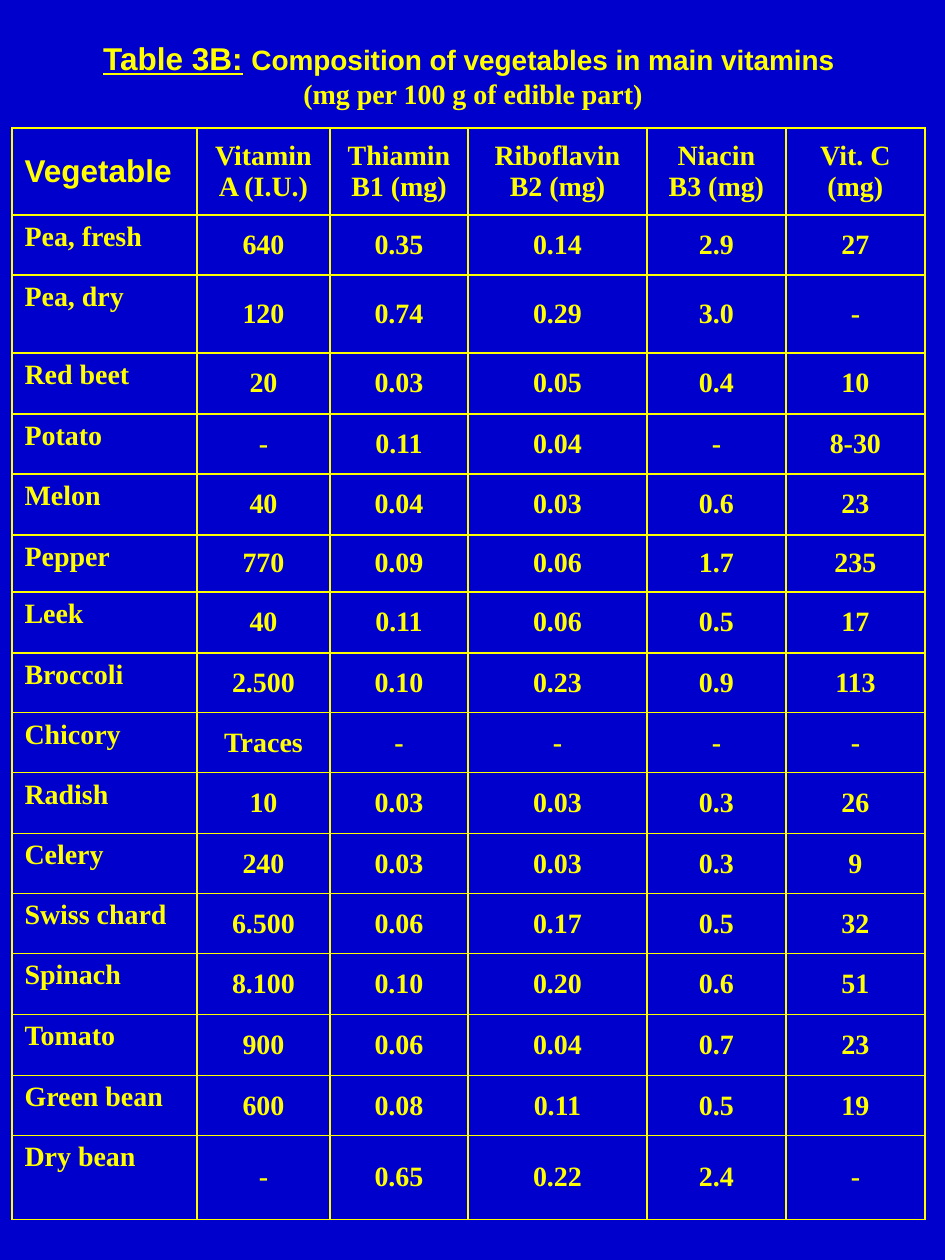
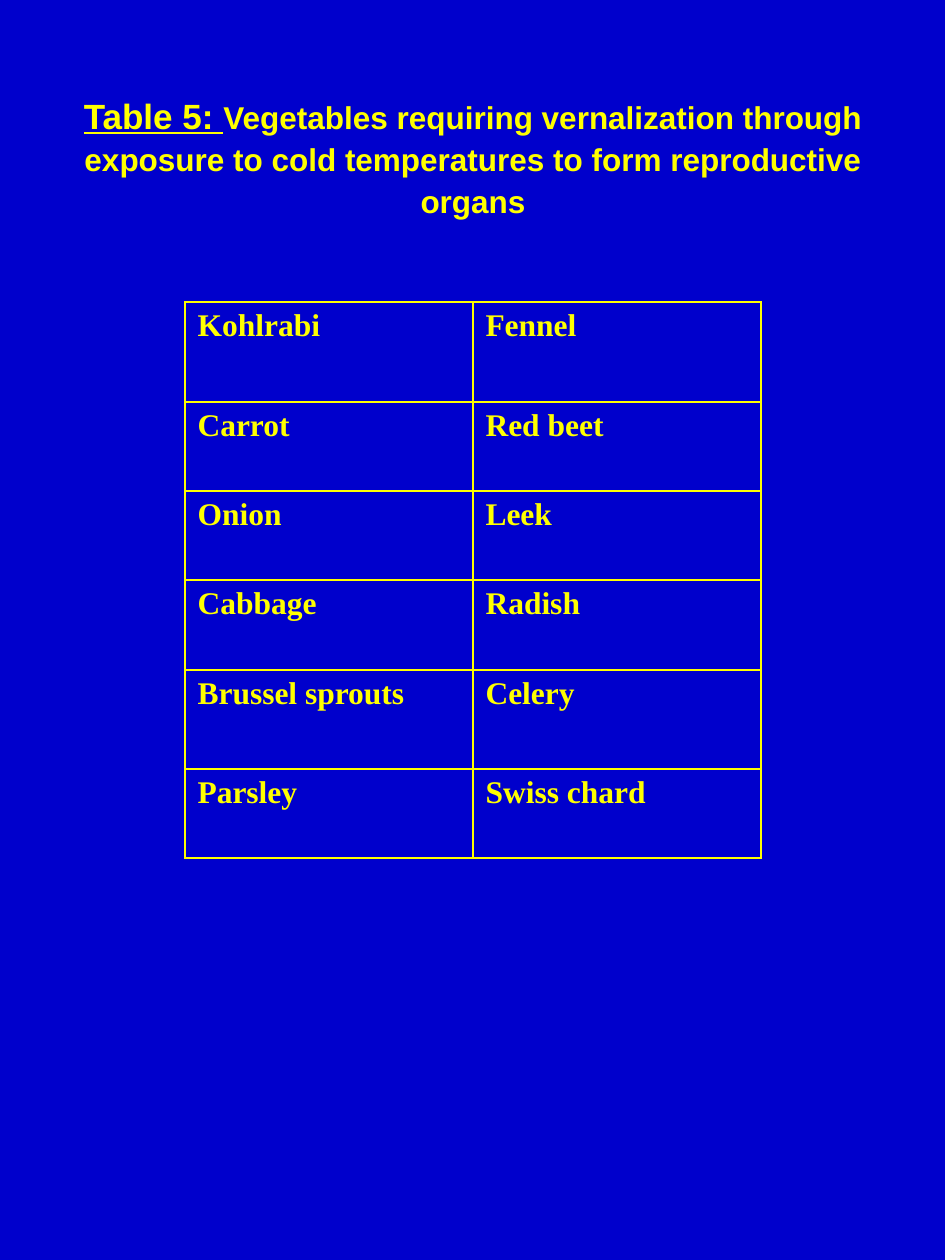
"""Build two slides of vegetable tables: vitamin composition and vernalization."""
from lxml import etree
from pptx import Presentation
from pptx.dml.color import RGBColor
from pptx.enum.text import MSO_ANCHOR, PP_ALIGN
from pptx.oxml.ns import qn
from pptx.util import Pt

PX = 914400 // 126
COLORS = {"background": "0000CC", "ink": "FFFF00"}
SANS, SERIF = "Arial", "Times New Roman"

VITAMIN_TITLE = [
    ("Table 3B:", {"size": Pt(18), "name": SANS, "underline": True}),
    (" ", {"size": Pt(18), "name": SANS}),
    ("Composition of vegetables in main vitamins \v", {"size": Pt(16), "name": SANS}),
    ("(mg per 100 g of edible part)", {"size": Pt(16), "name": SERIF}),
]
VITAMIN_HEADER = ("Vegetable", "Vitamin Α (I.U.)", "Thiamin\nB1 (mg)",
                  "Riboflavin\nB2 (mg)", "Niacin B3 (mg)", "Vit. C\n(mg)")
VITAMINS = [
    ("Pea, fresh", "640", "0.35", "0.14", "2.9", "27"),
    ("Pea, dry", "120", "0.74", "0.29", "3.0", "-"),
    ("Red beet", "20", "0.03", "0.05", "0.4", "10"),
    ("Potato", "-", "0.11", "0.04", "-", "8-30"),
    ("Melon", "40", "0.04", "0.03", "0.6", "23"),
    ("Pepper", "770", "0.09", "0.06", "1.7", "235"),
    ("Leek", "40", "0.11", "0.06", "0.5", "17"),
    ("Broccoli", "2.500", "0.10", "0.23", "0.9", "113"),
    ("Chicory", "Traces", "-", "-", "-", "-"),
    ("Radish", "10", "0.03", "0.03", "0.3", "26"),
    ("Celery", "240", "0.03", "0.03", "0.3", "9"),
    ("Swiss chard", "6.500", "0.06", "0.17", "0.5", "32"),
    ("Spinach", "8.100", "0.10", "0.20", "0.6", "51"),
    ("Tomato", "900", "0.06", "0.04", "0.7", "23"),
    ("Green bean", "600", "0.08", "0.11", "0.5", "19"),
    ("Dry bean", "-", "0.65", "0.22", "2.4", "-"),
]
VERNALIZATION_TITLE = [
    ("Table 5: ", {"size": Pt(20), "name": SANS, "underline": True}),
    ("Vegetables requiring vernalization through exposure to cold temperatures "
     "to form reproductive organs", {"size": Pt(18), "name": SANS}),
]
VERNALIZED = [
    ("Kohlrabi", "Fennel"),
    ("Carrot", "Red beet"),
    ("Onion", "Leek"),
    ("Cabbage", "Radish"),
    ("Brussel sprouts", "Celery"),
    ("Parsley", "Swiss chard"),
]


def vitamin_format(row, column):
    """Return the font, anchor and alignment of a cell in the vitamin table."""
    corner = row == column == 0
    font = {"size": Pt(18), "name": SANS} if corner else {"size": Pt(16), "name": SERIF}
    anchor = MSO_ANCHOR.TOP if column == 0 and row else MSO_ANCHOR.MIDDLE
    return font, anchor, PP_ALIGN.CENTER if column else PP_ALIGN.LEFT


def vernalized_format(row, column):
    """Return the font, anchor and alignment of a cell in the vernalization table."""
    return {"size": Pt(18), "name": SERIF}, MSO_ANCHOR.TOP, PP_ALIGN.LEFT


SLIDES = [
    {"title": VITAMIN_TITLE, "title_box": (20, 10, 906, 129), "spacing": 1.0,
     "rows": [VITAMIN_HEADER, *VITAMINS], "corner": (12, 128),
     "widths": [185, 133, 138, 179, 139, 139],
     "heights": [87, 60, 78, 61, 60, 61, 57, 61, 60, 60, 61, 60, 60, 61, 61, 60, 84],
     "cell_format": vitamin_format},
    {"title": VERNALIZATION_TITLE, "title_box": (48, 50, 850, 210), "spacing": 1.1,
     "rows": VERNALIZED, "corner": (185, 302),
     "widths": [288, 288], "heights": [100, 89, 89, 90, 99, 89],
     "cell_format": vernalized_format},
]


def set_font(font, values):
    """Apply the shared bold ink and the given font values."""
    font.color.rgb = RGBColor.from_string(COLORS["ink"])
    for attribute, value in {"bold": True, **values}.items():
        setattr(font, attribute, value)


def add_title(slide, pieces, box, spacing):
    """Add a centred title made of differently formatted runs."""
    frame = slide.shapes.add_textbox(*(length * PX for length in box)).text_frame
    frame.word_wrap = True
    frame.vertical_anchor = MSO_ANCHOR.MIDDLE
    paragraph = frame.paragraphs[0]
    paragraph.alignment = PP_ALIGN.CENTER
    paragraph.line_spacing = spacing
    for text, values in pieces:
        run = paragraph.add_run()
        run.text = text.rstrip("\v")
        set_font(run.font, values)
        if text.endswith("\v"):
            paragraph.add_line_break()


def add_borders(cell):
    """Draw a one-point line on every side of a cell."""
    properties = cell._tc.get_or_add_tcPr()
    for side in ("lnL", "lnR", "lnT", "lnB"):
        line = etree.SubElement(properties, qn(f"a:{side}"), w=str(Pt(1)))
        fill = etree.SubElement(line, qn("a:solidFill"))
        etree.SubElement(fill, qn("a:srgbClr"), val=COLORS["ink"])


def add_grid(slide, rows, corner, widths, heights, cell_format):
    """Add a bordered table without fill."""
    box = (*corner, sum(widths), sum(heights))
    table = slide.shapes.add_table(len(rows), len(widths),
                                   *(length * PX for length in box)).table
    table.first_row = table.horz_banding = False
    for column, width in zip(table.columns, widths):
        column.width = width * PX
    for row, height in zip(table.rows, heights):
        row.height = height * PX
    for r, texts in enumerate(rows):
        for c, text in enumerate(texts):
            cell = table.cell(r, c)
            font, anchor, alignment = cell_format(r, c)
            cell.text = text
            cell.vertical_anchor = anchor
            add_borders(cell)
            cell.fill.background()
            for paragraph in cell.text_frame.paragraphs:
                paragraph.alignment = alignment
                for run in paragraph.runs:
                    set_font(run.font, font)


def main():
    """Build and save the presentation."""
    deck = Presentation()
    deck.slide_width, deck.slide_height = 945 * PX, 1260 * PX
    background = deck.slide_master.background.fill
    background.solid()
    background.fore_color.rgb = RGBColor.from_string(COLORS["background"])
    for content in SLIDES:
        slide = deck.slides.add_slide(deck.slide_layouts[6])
        add_title(slide, content["title"], content["title_box"], content["spacing"])
        add_grid(slide, content["rows"], content["corner"], content["widths"],
                 content["heights"], content["cell_format"])
    deck.save("out.pptx")


if __name__ == "__main__":
    main()
